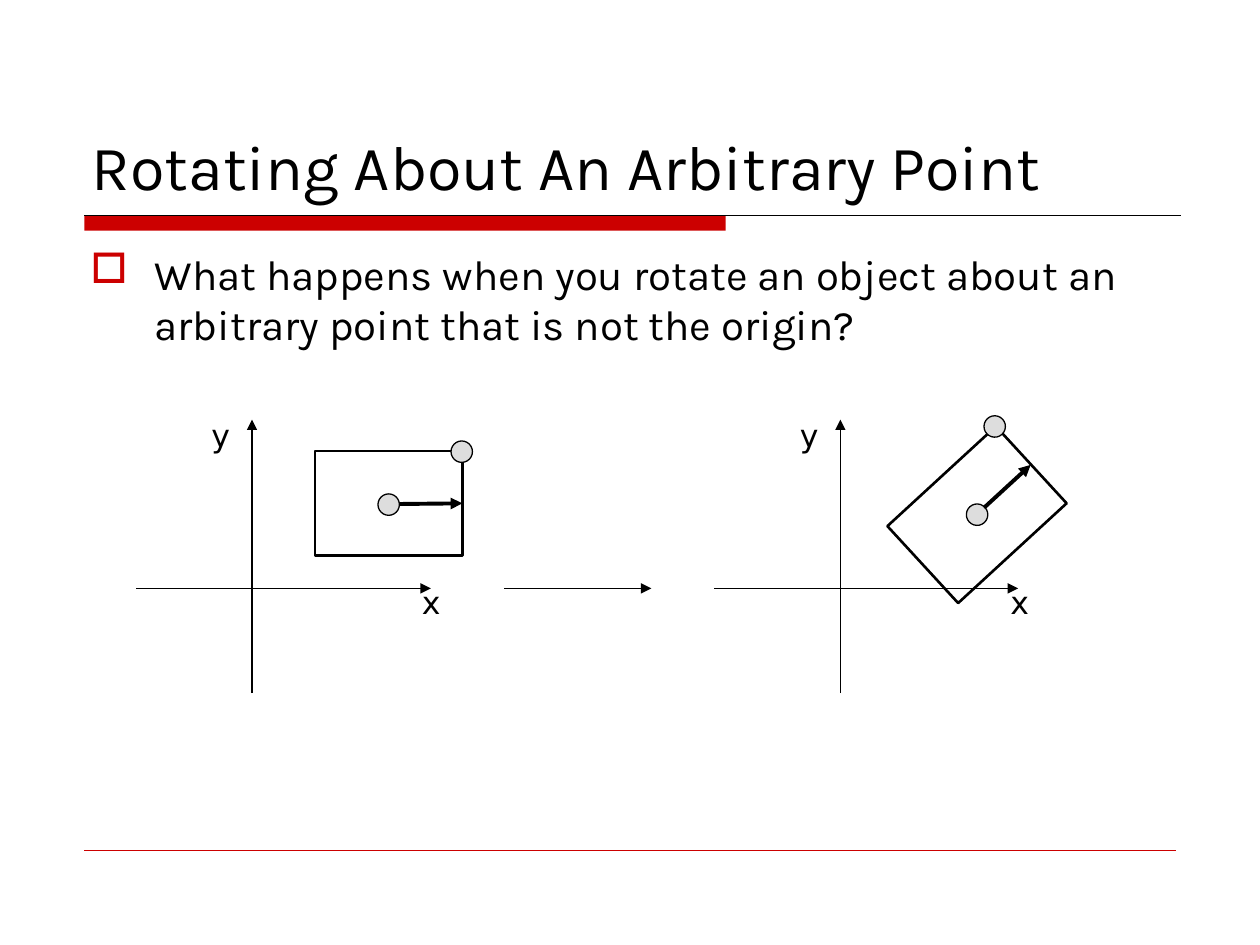
"""Build a slide on rotating an object about an arbitrary point."""
import pptx
import pptx.dml.color
import pptx.enum.shapes
import pptx.enum.text
import pptx.oxml.ns
import pptx.util
from lxml import etree

Inches = pptx.util.Inches
Pt = pptx.util.Pt
SHAPE = pptx.enum.shapes.MSO_SHAPE
ANCHOR = pptx.enum.text.MSO_ANCHOR
qn = pptx.oxml.ns.qn
BLACK = pptx.dml.color.RGBColor(0x00, 0x00, 0x00)
RED = pptx.dml.color.RGBColor(0xCC, 0x00, 0x00)
GRAY = pptx.dml.color.RGBColor(0xDD, 0xDD, 0xDD)

prs = pptx.Presentation()
prs.slide_width = Inches(10)
prs.slide_height = Inches(7.5)
s = prs.slides.add_slide(prs.slide_layouts[6])


def add_line(x1, y1, x2, y2, width, color=BLACK, arrow=True):
    c = s.shapes.add_connector(pptx.enum.shapes.MSO_CONNECTOR.STRAIGHT,
                               Inches(x1), Inches(y1), Inches(x2), Inches(y2))
    c.line.color.rgb = color
    c.line.width = Pt(width)
    if arrow:
        etree.SubElement(c.line._get_or_add_ln(), qn("a:tailEnd"), type="triangle")
    etree.SubElement(c._element.spPr, qn("a:effectLst"))
    return c


def add_text(x, y, w, h, text, size, font, anchor=ANCHOR.TOP, wrap=True):
    tf = s.shapes.add_textbox(Inches(x), Inches(y), Inches(w), Inches(h)).text_frame
    tf.word_wrap = wrap
    tf.vertical_anchor = anchor
    p = tf.paragraphs[0]
    p.text = text
    p.font.size = Pt(size)
    p.font.name = font
    p.font.color.rgb = BLACK
    return p


bar = s.shapes.add_shape(SHAPE.RECTANGLE, Inches(0.67), Inches(1.71), Inches(5.09), Inches(0.12))
bar.shadow.inherit = False
bar.fill.solid()
bar.fill.fore_color.rgb = RED
bar.line.fill.background()
add_line(0.67, 1.71, 9.37, 1.71, 0.75, arrow=False)
add_line(0.67, 6.75, 9.33, 6.75, 0.25, RED, arrow=False)

add_text(0.63, 0.33, 8.75, 1.33, "Rotating About An Arbitrary Point", 36, "Karla", ANCHOR.BOTTOM)
p = add_text(0.62, 1.92, 8.96, 4.67,
             "What happens when you rotate an object about an arbitrary point "
             "that is not the origin?", 24, "Karla")
p.space_before = Pt(4.8)
pPr = p._p.get_or_add_pPr()
pPr.set("marL", str(Inches(0.51)))
pPr.set("indent", str(-Inches(0.51)))
bullet_color = etree.Element(qn("a:buClr"))
etree.SubElement(bullet_color, qn("a:srgbClr"), val=str(RED))
bullet = etree.Element(qn("a:buChar"), char="□")
pPr.find(qn("a:spcBef")).addnext(bullet_color)
bullet_color.addnext(bullet)

add_line(4, 4.67, 5.17, 4.67, 0.75)

# axis x, axis start and end, rotation, box corner, dot corners, pointer
graphs = [
    (2, 1.08, 3.42, 0, (2.5, 3.58), [(3, 3.92), (3.58, 3.5)], (3.17, 4, 3.67, 4)),
    (6.67, 5.67, 8.08, 317.4, (7.17, 3.67), [(7.67, 4), (7.81, 3.3)], (7.81, 4.03, 8.18, 3.69)),
]
for axis, left, right, angle, corner, dots, pointer in graphs:
    add_line(axis, 5.5, axis, 3.33, 1)
    add_line(left, 4.67, right, 4.67, 1)
    for label, x, y in (("x", axis + 1.25, 4.58), ("y", axis - 0.42, 3.25)):
        add_text(x, y, 0.37, 0.5, label, 18, "DejaVu Sans", wrap=False)

    box = s.shapes.add_shape(SHAPE.RECTANGLE, Inches(corner[0]), Inches(corner[1]),
                             Inches(1.17), Inches(0.83))
    box.fill.background()
    box.line.width = Pt(1.5)
    circles = []
    for x, y in dots:
        dot = s.shapes.add_shape(SHAPE.OVAL, Inches(x), Inches(y), Inches(0.17), Inches(0.17))
        dot.fill.solid()
        dot.fill.fore_color.rgb = GRAY
        dot.line.width = Pt(0.75)
        circles.append(dot)
    for sp in [box] + circles:
        sp.shadow.inherit = False
        sp.line.color.rgb = BLACK
        sp.rotation = angle

    arrow = add_line(*pointer, 2.25)
    if angle == 0:
        arrow.end_connect(box, 3)

prs.save("out.pptx")
